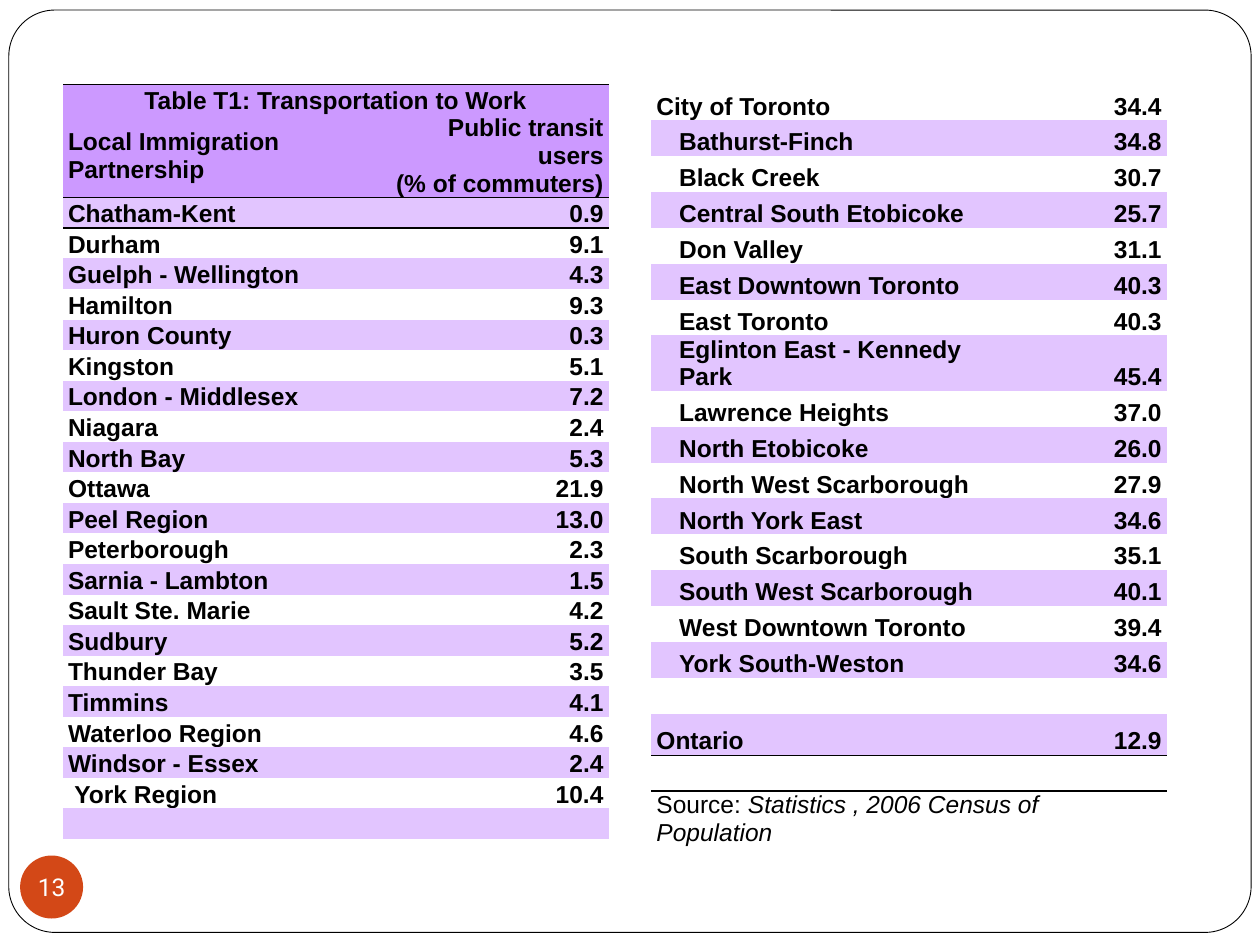
"""Build the slide with the two-part table of public transit commuters."""
from lxml import etree
from pptx import Presentation
from pptx.dml.color import RGBColor
from pptx.enum.shapes import MSO_SHAPE
from pptx.enum.text import MSO_ANCHOR, PP_ALIGN
from pptx.oxml.ns import qn
from pptx.util import Inches, Pt

ROUND_RECT, OVAL = MSO_SHAPE.ROUNDED_RECTANGLE, MSO_SHAPE.OVAL
MIDDLE, BOTTOM = MSO_ANCHOR.MIDDLE, MSO_ANCHOR.BOTTOM
LEFT, CENTER, RIGHT = PP_ALIGN.LEFT, PP_ALIGN.CENTER, PP_ALIGN.RIGHT
NO_STYLE = "{2D5ABB26-0587-4C30-8999-92F81FD0307C}"
HEADER, STRIPE = "CC99FF", "E2C5FF"
color = RGBColor.from_string


def add_run(p, text, bold=False, italic=False, font="Arial", hue="000000"):
    r = p.add_run()
    r.text = text
    r.font.size, r.font.name = Pt(14), font
    r.font.bold, r.font.italic = bold, italic
    r.font.color.rgb = color(hue)


def add_border(cell, side):
    ln = etree.Element(qn(f"a:{side}"), w=str(Pt(1)))
    fill = etree.SubElement(ln, qn("a:solidFill"))
    etree.SubElement(fill, qn("a:srgbClr"), val="000000")
    cell._tc.get_or_add_tcPr().insert(0, ln)


partnerships = [
    ("Table T1: Transportation to Work", ""),
    ("Local Immigration Partnership", "Public transit users\n(% of commuters)"),
    ("Chatham-Kent", "0.9"), ("Durham", "9.1"), ("Guelph - Wellington", "4.3"),
    ("Hamilton", "9.3"), ("Huron County", "0.3"), ("Kingston", "5.1"),
    ("London - Middlesex", "7.2"), ("Niagara", "2.4"), ("North Bay", "5.3"),
    ("Ottawa", "21.9"), ("Peel Region", "13.0"), ("Peterborough", "2.3"),
    ("Sarnia - Lambton", "1.5"), ("Sault Ste. Marie", "4.2"), ("Sudbury", "5.2"),
    ("Thunder Bay", "3.5"), ("Timmins", "4.1"), ("Waterloo Region", "4.6"),
    ("Windsor - Essex", "2.4"), (" York Region", "10.4"), ("", ""),
]
toronto = [
    ("City of Toronto", "34.4"), ("Bathurst-Finch", "34.8"), ("Black Creek", "30.7"),
    ("Central South Etobicoke", "25.7"), ("Don Valley", "31.1"),
    ("East Downtown Toronto", "40.3"), ("East Toronto", "40.3"),
    ("Eglinton East - Kennedy Park", "45.4"), ("Lawrence Heights", "37.0"),
    ("North Etobicoke", "26.0"), ("North West Scarborough", "27.9"),
    ("North York East", "34.6"), ("South Scarborough", "35.1"),
    ("South West Scarborough", "40.1"), ("West Downtown Toronto", "39.4"),
    ("York South-Weston", "34.6"), ("", ""), ("Ontario", "12.9"), ("", ""), ("", ""),
]
left_heights = [Inches(0.24), Inches(0.65)] + [Inches(5.1) // 21] * 21
right_heights = [Inches(5.7) // 20] * 20
right_heights[7] = right_heights[19] = Inches(0.44)
right_heights[17] = Inches(0.33)
left_fills = [HEADER] * 2 + [None if i % 2 else STRIPE for i in range(21)]
right_fills = [STRIPE if i % 2 else None for i in range(19)] + [None]

prs = Presentation()
prs.slide_width, prs.slide_height = Inches(10), Inches(7.5)
s = prs.slides.add_slide(prs.slide_layouts[6])

frame = s.shapes.add_shape(ROUND_RECT, Inches(0.07), Inches(0.08), Inches(9.86), Inches(7.32))
frame.adjustments[0] = 0.05
frame.shadow.inherit = False
frame.fill.solid()
frame.fill.fore_color.rgb = color("FFFFFF")
frame.line.color.rgb = color("000000")
frame.line.width = Pt(0.5)

tables = []
for x, widths, rows, heights, fills, indented in (
    (0.5, (2.52, 1.81), partnerships, left_heights, left_fills, range(0)),
    (5.17, (2.92, 1.17), toronto, right_heights, right_fills, range(1, 16)),
):
    gf = s.shapes.add_table(len(rows), 2, Inches(x), Inches(0.67), Inches(sum(widths)), sum(heights))
    tbl = gf.table
    tbl.first_row = tbl.horz_banding = False
    next(gf._element.iter(qn("a:tableStyleId"))).text = NO_STYLE
    for col, width in zip(tbl.columns, widths):
        col.width = Inches(width)
    for i, (row, height, fill) in enumerate(zip(rows, heights, fills)):
        tbl.rows[i].height = height
        for j, text in enumerate(row):
            cell = tbl.cell(i, j)
            cell.margin_left = cell.margin_right = Inches(0.04)
            cell.margin_top = cell.margin_bottom = 0
            cell.vertical_anchor = BOTTOM
            if fill:
                cell.fill.solid()
                cell.fill.fore_color.rgb = color(fill)
            else:
                cell.fill.background()
            tf = cell.text_frame
            for k, line in enumerate(text.split("\n")):
                p = tf.add_paragraph() if k else tf.paragraphs[0]
                p.alignment = RIGHT if j else LEFT
                if j == 0 and i in indented:
                    p._p.get_or_add_pPr().set("marL", str(Inches(0.18)))
                if line:
                    add_run(p, line, bold=True)
                else:
                    etree.SubElement(p._p, qn("a:endParaRPr"), sz="1400")
    tables.append(tbl)

left, right = tables
for j in range(2):
    left.cell(1, j).vertical_anchor = MIDDLE
    for tbl, i, side in ((left, 0, "lnT"), (left, 1, "lnB"), (left, 2, "lnT"),
                         (right, 17, "lnB"), (right, 18, "lnT")):
        add_border(tbl.cell(i, j), side)
for tbl, i in ((left, 0), (right, 18), (right, 19)):
    tbl.cell(i, 0).merge(tbl.cell(i, 1))
left.cell(0, 0).text_frame.paragraphs[0].alignment = CENTER
source = right.cell(19, 0).text_frame.paragraphs[0]
add_run(source, "Source: ")
add_run(source, "Statistics , 2006 Census of Population", italic=True)

badge = s.shapes.add_shape(OVAL, Inches(0.16), Inches(6.79), Inches(0.5), Inches(0.5))
badge.shadow.inherit = False
badge.fill.solid()
badge.fill.fore_color.rgb = color("D34817")
badge.line.fill.background()
tf = badge.text_frame
tf.margin_left = tf.margin_right = tf.margin_top = tf.margin_bottom = 0
tf.word_wrap = False
tf.vertical_anchor = MIDDLE
tf.paragraphs[0].alignment = CENTER
add_run(tf.paragraphs[0], "13", font="Roboto", hue="FFFFFF")

prs.save("out.pptx")
